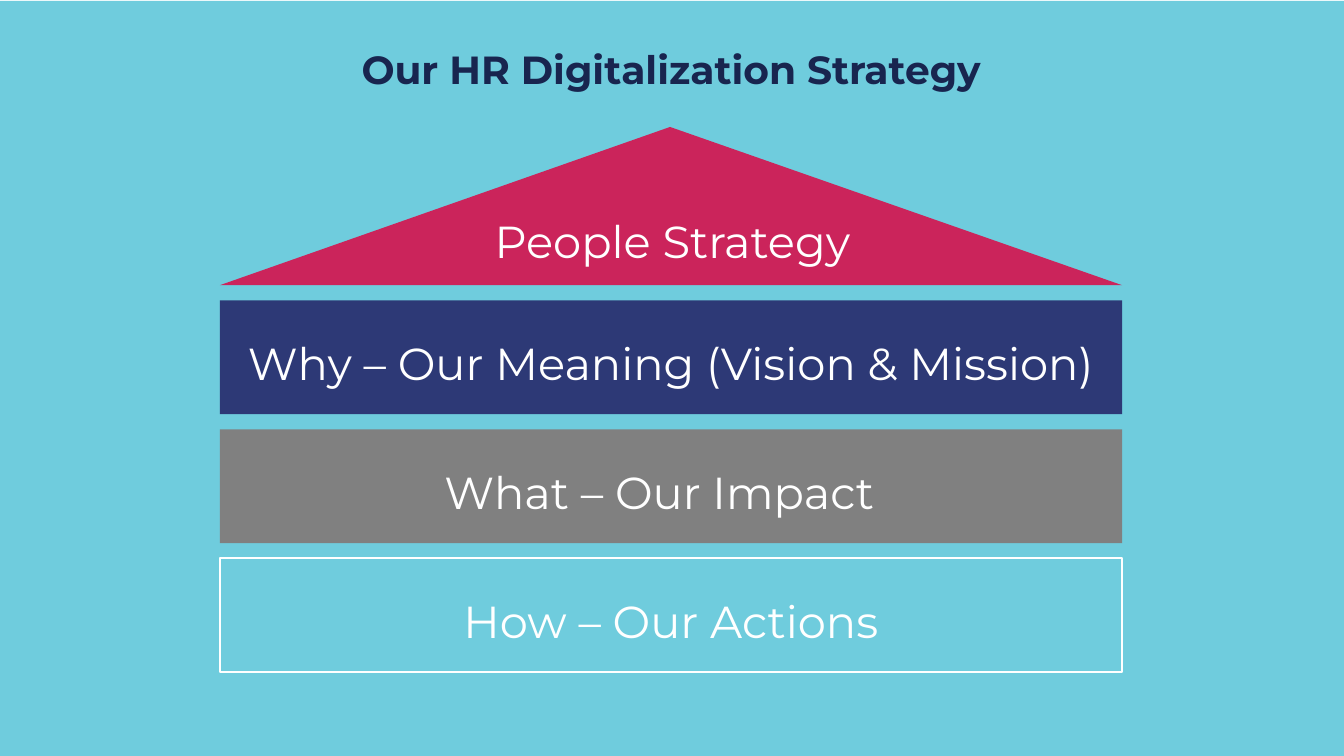
import pptx
import pptx.util
import pptx.dml.color
import pptx.enum.shapes
import pptx.enum.text

Inches, Pt = pptx.util.Inches, pptx.util.Pt
SHAPE = pptx.enum.shapes.MSO_SHAPE
ALIGN, ANCHOR = pptx.enum.text.PP_ALIGN, pptx.enum.text.MSO_ANCHOR

# Content: text, fill, outline, inset on the right
TITLE = "Our HR Digitalization Strategy"
ROOF = "People Strategy"
FLOORS = [
    ("Why – Our Meaning (Vision & Mission)", "navy", None, 0),
    ("What – Our Impact", "grey", None, 0.23),
    ("How – Our Actions", "sky", "white", 0),
]

# Theme
THEME = {
    "font": "Montserrat", "title_size": 28, "label_size": 32, "line": 1.5,
    "sky": "6FCCDD", "navy": "2D3976", "grey": "808080",
    "crimson": "CB245B", "ink": "18254F", "white": "FFFFFF",
}

# Grid: one column for the house, equal floors below the roof
W, H = 13.33, 7.5
LEFT, WIDTH = 2.18, 8.95
FLOOR_TOP, FLOOR_H, GAP = 2.98, 1.13, 0.15
ROOF_H = 1.57
ROOF_TOP = FLOOR_TOP - GAP - ROOF_H


def rgb(name):
    return pptx.dml.color.RGBColor.from_string(THEME[name])


def place(sp, *box):
    for side, value in zip(("left", "top", "width", "height"), box):
        setattr(sp, side, Inches(value))


def add_block(s, kind, box, fill, outline=None):
    sp = s.shapes.add_shape(kind, *map(Inches, box))
    sp.shadow.inherit = False
    sp.fill.solid()
    sp.fill.fore_color.rgb = rgb(fill)
    if outline:
        sp.line.color.rgb = rgb(outline)
        sp.line.width = Pt(THEME["line"])
    else:
        sp.line.fill.background()
    return sp


def write(sp, text, size, color, bold=False, spacing=1.2, anchor=ANCHOR.MIDDLE,
          insets=(0, 0, 0, 0)):
    tf = sp.text_frame
    frame = {"word_wrap": True, "vertical_anchor": anchor,
             "auto_size": pptx.enum.text.MSO_AUTO_SIZE.NONE}
    for side, value in zip(("left", "top", "right", "bottom"), insets):
        frame["margin_" + side] = Inches(value)
    for name, value in frame.items():
        setattr(tf, name, value)
    p = tf.paragraphs[0]
    p.alignment, p.line_spacing = ALIGN.CENTER, spacing
    r = p.add_run()
    r.text = text
    for name, value in {"name": THEME["font"], "size": Pt(THEME[size]),
                        "bold": bold}.items():
        setattr(r.font, name, value)
    r.font.color.rgb = rgb(color)


prs = pptx.Presentation()
prs.slide_width, prs.slide_height = Inches(W), Inches(H)
s = prs.slides.add_slide(prs.slide_layouts[5])

# Backdrop
add_block(s, SHAPE.RECTANGLE, (0, 0.01, W, H), "sky")

# Floors of the house
for i, (text, fill, outline, right) in enumerate(FLOORS):
    box = (LEFT, FLOOR_TOP + i * (FLOOR_H + GAP), WIDTH, FLOOR_H)
    sp = add_block(s, SHAPE.RECTANGLE, box, fill, outline)
    write(sp, text, "label_size", "white", insets=(0, 0, right, 0))

# Roof and its label
roof = add_block(s, SHAPE.ISOSCELES_TRIANGLE, (LEFT, ROOF_TOP, WIDTH, ROOF_H), "crimson")
roof.adjustments[0] = 0.499
label = s.shapes.add_textbox(0, 0, 0, 0)
place(label, 4.56, 2.01, 4.22, 0.6)
write(label, ROOF, "label_size", "white", anchor=ANCHOR.TOP)

# Title, brought in front of the backdrop
title = s.shapes.title
place(title, 1.44, 0.4, 10.43, 0.65)
write(title, TITLE, "title_size", "ink", bold=True, spacing=1.0,
      anchor=ANCHOR.TOP, insets=(0.1, 0.05, 0.1, 0.05))
s.shapes._spTree.append(title._element)

prs.save("out.pptx")
